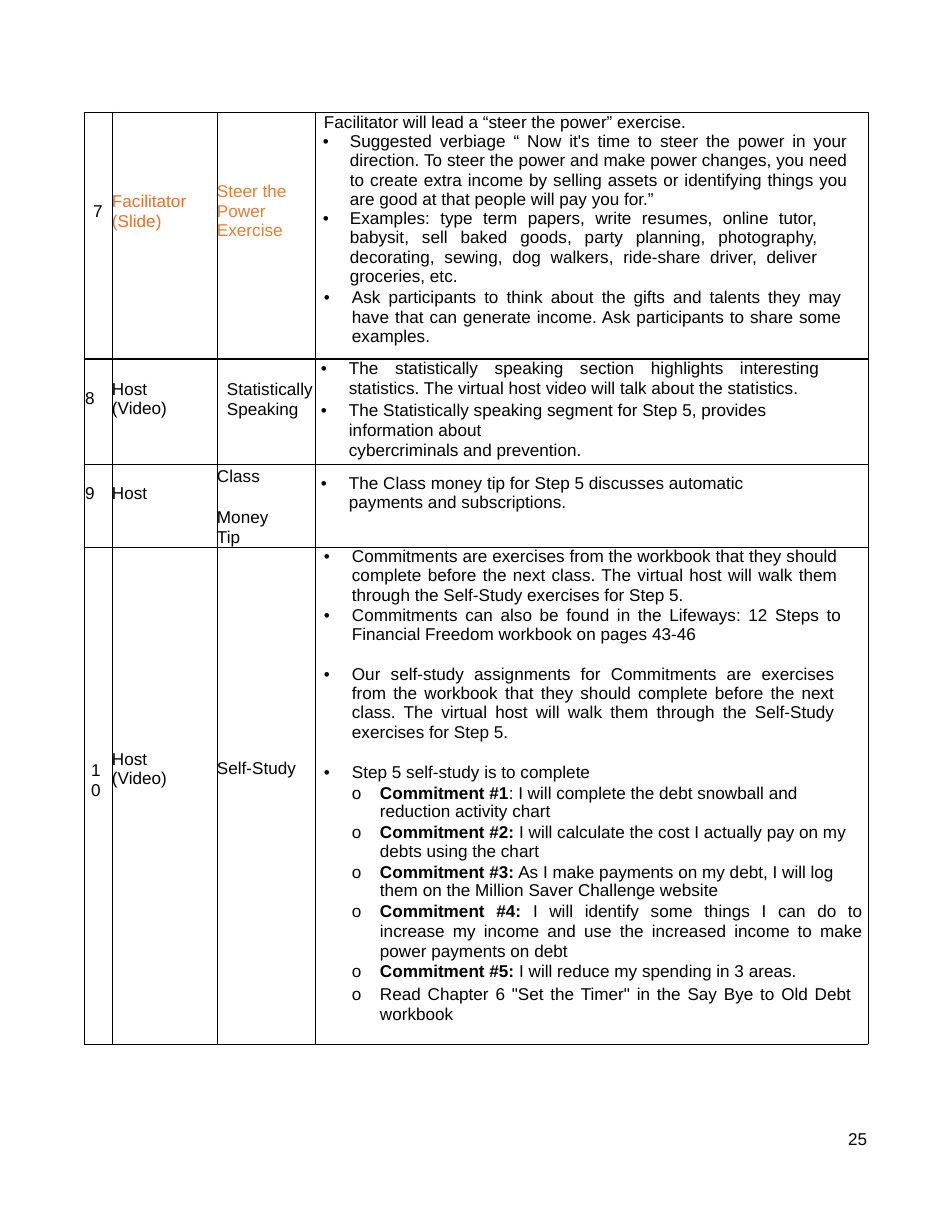
from lxml.etree import SubElement
from pptx import Presentation
from pptx.dml.color import RGBColor
from pptx.enum.text import PP_ALIGN
from pptx.oxml import parse_xml
from pptx.oxml.ns import nsdecls, qn
from pptx.util import Emu, Pt

PX = 914400 // 112
COLORS = {"ink": "000000", "role": "F06C24", "activity": "EB7B2F"}

COLUMN_WIDTHS = [28, 105, 98, 553]
ROW_HEIGHTS = [247, 105, 82, 497]
TABLE_LEFT, TABLE_TOP = 84, 112

BULLET = dict(bullet="•", left=37, hang=28)
JUSTIFIED = dict(BULLET, justify=True, spacing=1.01)
COMMITMENT = dict(bullet="o", left=65, hang=28, right=20, spacing=Pt(12), level=1)
COMMITMENT_JUSTIFIED = dict(COMMITMENT, justify=True)

STEER = [
    ("Facilitator will lead a “steer the power” exercise.",
     dict(left=9, spacing=Pt(12.9))),
    ("Suggested verbiage “ Now it's time to steer the power in your direction. "
     "To steer the power and make power changes, you need to create extra income "
     "by selling assets or identifying things you are good at that people will "
     "pay you for.”", dict(JUSTIFIED, left=35, hang=27, right=20)),
    ("Examples: type term papers, write resumes, online tutor, babysit, sell "
     "baked goods, party planning, photography, decorating, sewing, dog walkers, "
     "ride-share driver, deliver groceries, etc.",
     dict(JUSTIFIED, left=35, hang=27, right=50)),
    ("Ask participants to think about the gifts and talents they may have that "
     "can generate income. Ask participants to share some examples.",
     dict(JUSTIFIED, right=26, spacing=Pt(12.7), before=0.9)),
]
STATISTICS = [
    ("The statistically speaking section highlights interesting statistics. "
     "The virtual host video will talk about the statistics.",
     dict(JUSTIFIED, left=34, right=48, spacing=1.02)),
    ("The Statistically speaking segment for Step 5, provides information about",
     dict(BULLET, left=34, right=60, spacing=Pt(12.7), before=1.6)),
    ("cybercriminals and prevention.", dict(left=34, spacing=Pt(12.8))),
]
MONEY_TIP = [
    ("The Class money tip for Step 5 discusses automatic payments and "
     "subscriptions.", dict(BULLET, left=34, right=70)),
]
SELF_STUDY = [
    ("Commitments are exercises from the workbook that they should complete "
     "before the next class. The virtual host will walk them through the "
     "Self-Study exercises for Step 5.", dict(JUSTIFIED, right=30)),
    ("Commitments can also be found in the Lifeways: 12 Steps to Financial "
     "Freedom workbook on pages 43-46", dict(JUSTIFIED, right=26, before=0.6)),
    ("Our self-study assignments for Commitments are exercises from the workbook "
     "that they should complete before the next class. The virtual host will walk "
     "them through the Self-Study exercises for Step 5.",
     dict(JUSTIFIED, right=33, before=13.4)),
    ("Step 5 self-study is to complete", dict(BULLET, before=13.4)),
    ("I will complete the debt snowball and reduction activity chart",
     dict(COMMITMENT, lead=("Commitment #1", ": "), before=1.6)),
    ("I will calculate the cost I actually pay on my debts using the chart",
     dict(COMMITMENT, lead=("Commitment #2:", " "), before=1.2)),
    ("As I make payments on my debt, I will log them on the Million Saver "
     "Challenge website", dict(COMMITMENT, lead=("Commitment #3:", " "), before=1.6)),
    ("I will identify some things I can do to increase my income and use the "
     "increased income to make power payments on debt",
     dict(COMMITMENT_JUSTIFIED, lead=("Commitment #4:", " "), right=5,
          spacing=Pt(12.7), before=0.8)),
    ("I will reduce my spending in 3 areas.",
     dict(COMMITMENT_JUSTIFIED, lead=("Commitment #5:", " "), spacing=Pt(12.9))),
    ("Read Chapter 6 \"Set the Timer\" in the Say Bye to Old Debt workbook",
     dict(COMMITMENT_JUSTIFIED, right=16, spacing=Pt(12.6), before=2.3)),
]

HOST_VIDEO = [("Host (Video)", dict(right=30, spacing=1.01))]
AGENDA = [
    [(90, [("7", dict(left=9))]),
     (80, [("Facilitator (Slide)", dict(color="role", spacing=1.02))]),
     (70, [("Steer the Power Exercise", dict(color="activity", spacing=1.02))]),
     (0, STEER)],
    [(30, [("8", dict(left=1))]),
     (21, HOST_VIDEO),
     (21, [("Statistically Speaking", dict(left=10, spacing=1.02))]),
     (0, STATISTICS)],
    [(20, [("9", dict(left=1))]),
     (20, [("Host", {})]),
     (1, [("Class", dict(spacing=Pt(13.3))),
          ("Money", dict(spacing=Pt(13.3), before=13.3)),
          ("Tip", dict(spacing=Pt(12.8)))]),
     (10, MONEY_TIP)],
    [(213, [("1", dict(left=7, spacing=Pt(12.9))),
            ("0", dict(left=7, spacing=Pt(12.9)))]),
     (203, HOST_VIDEO),
     (212, [("Self-Study", {})]),
     (0, SELF_STUDY)],
]


def px(length):
    return Emu(length * PX)


def write(paragraph, text, color="ink", left=0, right=0, hang=0, spacing=1.0,
          before=0, justify=False, bullet=None, lead=None, level=0):
    paragraph.alignment = PP_ALIGN.JUSTIFY if justify else PP_ALIGN.LEFT
    paragraph.level = level
    paragraph.line_spacing = spacing
    paragraph.space_before = Pt(before)
    properties = paragraph._p.get_or_add_pPr()
    for name, length in (("marL", left), ("marR", right), ("indent", -hang)):
        properties.set(name, str(px(length)))
    if bullet:
        SubElement(properties, qn("a:buFont"), typeface="Arial")
        SubElement(properties, qn("a:buChar"), char=bullet)
    pieces = [(text, False)]
    if lead:
        pieces = [(lead[0], True), (lead[1] + text, False)]
    for words, bold in pieces:
        run = paragraph.add_run()
        run.text = words
        run.font.name = "Arial"
        run.font.size = Pt(11)
        run.font.bold = bold
        run.font.color.rgb = RGBColor.from_string(COLORS[color])


def fill_frame(frame, paragraphs):
    frame.word_wrap = True
    for index, (text, style) in enumerate(paragraphs):
        paragraph = frame.add_paragraph() if index else frame.paragraphs[0]
        write(paragraph, text, **style)


def draw_borders(cell, widths):
    properties = cell._tc.get_or_add_tcPr()
    for index, (side, width) in enumerate(widths.items()):
        properties.insert(index, parse_xml(
            f'<a:ln{side} {nsdecls("a")} w="{Pt(width)}"><a:solidFill>'
            f'<a:srgbClr val="{COLORS["ink"]}"/></a:solidFill></a:ln{side}>'))


def add_agenda(slide):
    table = slide.shapes.add_table(
        len(ROW_HEIGHTS), len(COLUMN_WIDTHS), px(TABLE_LEFT), px(TABLE_TOP),
        px(sum(COLUMN_WIDTHS)), px(sum(ROW_HEIGHTS))).table
    table.first_row = table.horz_banding = False
    for column, width in zip(table.columns, COLUMN_WIDTHS):
        column.width = px(width)
    for row_index, (row, height) in enumerate(zip(table.rows, ROW_HEIGHTS)):
        row.height = px(height)
        borders = {"L": 0.5, "R": 0.5, "T": 1 if row_index == 1 else 0.5,
                   "B": 1 if row_index == 0 else 0.5}
        for cell, (top, paragraphs) in zip(row.cells, AGENDA[row_index]):
            cell.margin_left = cell.margin_right = cell.margin_bottom = 0
            cell.margin_top = px(top)
            cell.fill.background()
            draw_borders(cell, borders)
            fill_frame(cell.text_frame, paragraphs)


def add_page_number(slide):
    frame = slide.shapes.add_textbox(px(844), px(1128), px(28), px(22)).text_frame
    frame.margin_left = frame.margin_right = 0
    frame.margin_top = frame.margin_bottom = 0
    fill_frame(frame, [("25", dict(left=4))])


def main():
    presentation = Presentation()
    presentation.slide_width, presentation.slide_height = px(952), px(1232)
    slide = presentation.slides.add_slide(presentation.slide_layouts[6])
    add_page_number(slide)
    add_agenda(slide)
    presentation.save("out.pptx")


if __name__ == "__main__":
    main()
